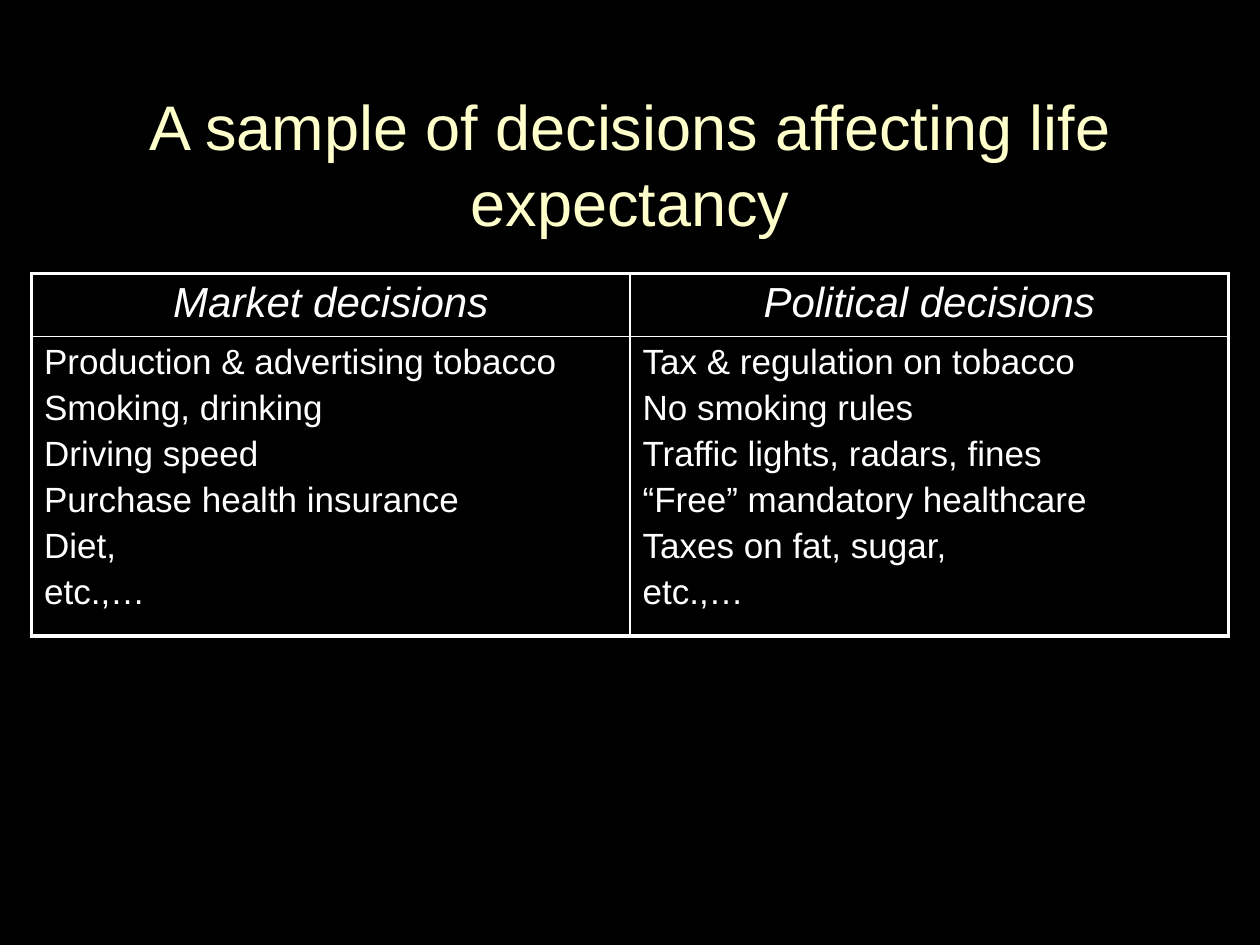
from lxml.etree import SubElement
from pptx import Presentation
from pptx.dml.color import RGBColor
from pptx.enum.text import MSO_ANCHOR, PP_ALIGN
from pptx.oxml.ns import qn
from pptx.util import Inches, Pt

BLACK = RGBColor(0x00, 0x00, 0x00)
WHITE = RGBColor(0xFF, 0xFF, 0xFF)
CREAM = RGBColor(0xFF, 0xFF, 0xCC)

# Each column: heading, then its list of decisions
DECISIONS = [
    ("Market decisions", [
        "Production & advertising tobacco", "Smoking, drinking", "Driving speed",
        "Purchase health insurance", "Diet,", "etc.,…"]),
    ("Political decisions", [
        "Tax & regulation on tobacco", "No smoking rules",
        "Traffic lights, radars, fines", "“Free” mandatory healthcare",
        "Taxes on fat, sugar,", "etc.,…"]),
]


class SlideBuilder:
    """Holds the style and the current slide; lengths are grid units."""
    FONT = "Arial"
    UNIT = Inches(0.25)  # 40 columns by 30 rows
    OUTER, INNER = Pt(2.25), Pt(1)

    def __init__(self, prs):
        self.s = prs.slides.add_slide(prs.slide_layouts[6])
        fill = self.s.background.fill
        fill.solid()
        fill.fore_color.rgb = BLACK

    def grid(self, *units):
        return [round(u * self.UNIT) for u in units]

    def run(self, p, text, size, color, italic=False):
        r = p.add_run()
        r.text = text
        r.font.name, r.font.size, r.font.italic = self.FONT, Pt(size), italic
        r.font.color.rgb = color

    def title(self, text, *box):
        tf = self.s.shapes.add_textbox(*self.grid(*box)).text_frame
        tf.word_wrap = True
        tf.vertical_anchor = MSO_ANCHOR.MIDDLE
        p = tf.paragraphs[0]
        p.alignment = PP_ALIGN.CENTER
        self.run(p, text, 36, CREAM)

    def cell(self, cell, lines, size, align, italic=False):
        tf = cell.text_frame
        for i, line in enumerate(lines):
            p = tf.add_paragraph() if i else tf.paragraphs[0]
            p.alignment = align
            # Space before as a share of the text size
            before = SubElement(p._p.get_or_add_pPr(), qn("a:spcBef"))
            SubElement(before, qn("a:spcPct"), val="20000")
            self.run(p, line, size, WHITE, italic)

    def borders(self, cell, outer_sides):
        # Border lines come before the fill
        tc_pr = cell._tc.get_or_add_tcPr()
        for side in "LRTB":
            width = self.OUTER if side in outer_sides else self.INNER
            ln = SubElement(tc_pr, qn(f"a:ln{side}"), w=str(width))
            fill = SubElement(ln, qn("a:solidFill"))
            SubElement(fill, qn("a:srgbClr"), val=str(WHITE))
        cell.fill.background()

    def table(self, columns, left, top, width, row_heights):
        x, y, w, h = self.grid(left, top, width, sum(row_heights))
        table = self.s.shapes.add_table(2, len(columns), x, y, w, h).table
        table.first_row = table.horz_banding = False
        for row, height in zip(table.rows, self.grid(*row_heights)):
            row.height = height
        for c, (heading, items) in enumerate(columns):
            side = "L" if c == 0 else "R"
            head, body = table.cell(0, c), table.cell(1, c)
            self.cell(head, [heading], 24, PP_ALIGN.CENTER, italic=True)
            self.cell(body, items, 20, PP_ALIGN.LEFT)
            self.borders(head, side + "T")
            self.borders(body, side + "B")


def main():
    prs = Presentation()
    prs.slide_width, prs.slide_height = Inches(10), Inches(7.5)
    slide = SlideBuilder(prs)

    # Title
    slide.title("A sample of decisions affecting life expectancy", 3, 2.68, 34, 5)

    # Two columns of decisions
    slide.table(DECISIONS, 1, 8.68, 38, (2, 8.56))

    prs.save("out.pptx")


if __name__ == "__main__":
    main()
